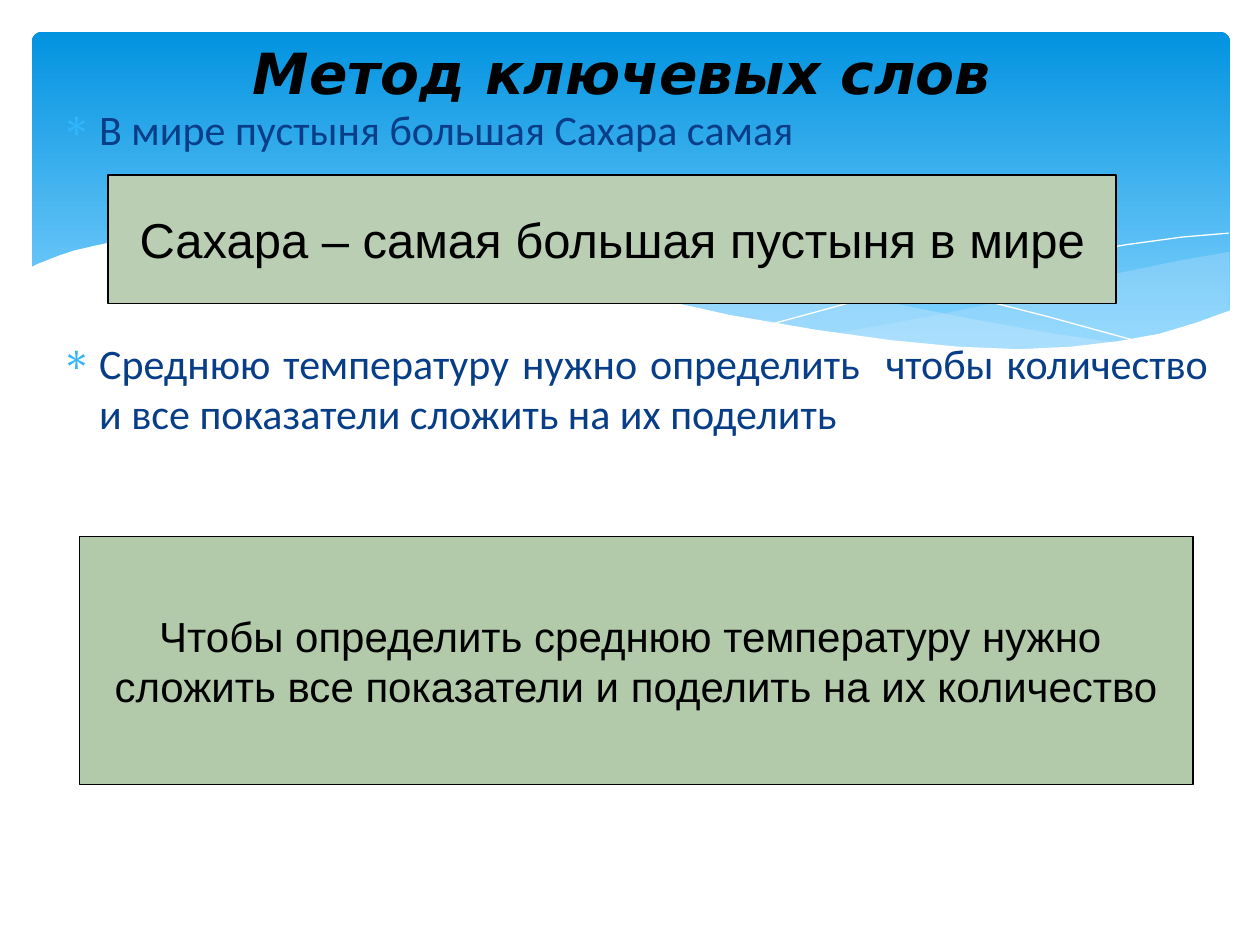
from typing import NamedTuple, Optional

from lxml import etree
from pptx import Presentation
from pptx.dml.color import RGBColor
from pptx.enum.shapes import MSO_SHAPE
from pptx.enum.text import MSO_ANCHOR, PP_ALIGN
from pptx.oxml.ns import qn
from pptx.util import Cm, Pt

ROUNDED, RECTANGLE = MSO_SHAPE.ROUNDED_RECTANGLE, MSO_SHAPE.RECTANGLE
LEFT, CENTER, JUSTIFY = PP_ALIGN.LEFT, PP_ALIGN.CENTER, PP_ALIGN.JUSTIFY
TOP, MIDDLE = MSO_ANCHOR.TOP, MSO_ANCHOR.MIDDLE

COLORS = {
    "sky_top": "0293E0", "sky_bottom": "83D3FE", "wave": "C6E7FC",
    "white": "FFFFFF", "black": "000000", "task": "073E87",
    "bullet": "31B6FD", "sahara": "B9CEB2", "temperature": "B2CAAA",
}


class Wave(NamedTuple):
    points: list[tuple[float, float]]  # cm
    fill: Optional[str] = None  # without a fill it is a thin white curve
    opacity: int = 100


class Answer(NamedTuple):
    left: float
    top: float
    width: float
    height: float
    fill: str
    size: int
    lines: list[str]


class Task(NamedTuple):
    text: str
    align: PP_ALIGN
    space_before: int


WAVES = [
    Wave([(24.77, 5.08), (23.74, 5.26), (22.63, 5.49), (21.87, 5.66), (20.45, 6.02),
          (19.13, 6.3), (17.93, 6.53), (16.79, 6.73), (17.55, 6.83), (18.59, 6.96),
          (19.53, 7.03), (20.4, 7.06), (21.21, 7.04), (21.92, 6.99), (22.58, 6.91),
          (23.19, 6.81), (23.75, 6.65), (24.46, 6.4), (24.79, 6.27), (24.79, 5.08)],
         "wave", 29),
    Wave([(22.68, 6.93), (21.26, 6.73), (19.69, 6.45), (17.93, 6.1), (15.98, 5.64),
          (14.83, 5.36), (13.74, 5.16), (12.75, 4.98), (11.81, 4.85), (10.67, 4.75),
          (9.65, 4.7), (8.74, 4.72), (7.95, 4.78), (7.26, 4.85), (8.2, 4.98),
          (9.19, 5.16), (10.26, 5.36), (11.4, 5.64), (13.46, 6.1), (15.27, 6.48),
          (16.51, 6.71), (17.65, 6.86), (18.69, 6.99), (19.63, 7.04), (20.5, 7.06),
          (21.29, 7.06), (22.02, 7.01)],
         "wave", 40),
    Wave([(7.85, 4.95), (8.74, 4.83), (9.5, 4.78), (10.57, 4.75), (11.91, 4.8),
          (13.54, 4.93), (14.78, 5.08), (16.15, 5.28), (17.65, 5.56), (19.3, 5.92),
          (21.11, 6.38), (23.04, 6.91)]),
    Wave([(15.57, 6.53), (17.07, 6.12), (18.29, 5.82), (19.71, 5.49), (21.23, 5.18),
          (22.73, 4.93), (23.83, 4.78), (24.77, 4.7)]),
    Wave([(24.82, 6.25), (24.13, 6.5), (23.37, 6.73), (22.53, 6.88), (21.59, 6.99),
          (20.55, 7.04), (19.33, 6.99), (17.98, 6.86), (16.46, 6.65), (14.71, 6.35),
          (12.78, 5.92), (11.35, 5.59), (9.93, 5.26), (8.64, 5), (7.42, 4.83),
          (6.35, 4.72), (5.36, 4.67), (4.5, 4.67), (3.71, 4.7), (3.02, 4.75),
          (2.41, 4.85), (1.93, 4.95), (1.5, 5.05), (1.17, 5.16), (0.74, 5.33),
          (0.58, 5.41), (0.58, 8.36), (24.82, 8.36)],
         "white"),
]

TASKS = [
    Task("В мире пустыня большая Сахара самая", LEFT, 0),
    Task("Среднюю температуру нужно определить  чтобы количество и все показатели "
         "сложить на их поделить", JUSTIFY, 105),
]

ANSWERS = [
    Answer(2.18, 3.53, 20.32, 2.59, "sahara", 28,
           ["Сахара – самая большая пустыня в мире"]),
    Answer(1.6, 10.82, 22.45, 5, "temperature", 24,
           ["Чтобы определить среднюю температуру нужно ",
            "сложить все показатели и поделить на их количество"]),
]


def rgb(name: str) -> RGBColor:
    return RGBColor.from_string(COLORS[name])


def style(font, name: str, size: float, color: str) -> None:
    font.name, font.size = name, Pt(size)
    font.color.rgb = rgb(color)


def draw_sky(shapes) -> None:
    sky = shapes.add_shape(ROUNDED, Cm(0.64), Cm(0.64), Cm(24.16), Cm(6.86))
    sky.adjustments[0] = 0.03
    sky.shadow.inherit = False
    sky.line.fill.background()
    sky.fill.gradient()
    sky.fill.gradient_angle = 270
    top, bottom = sky.fill.gradient_stops
    top.color.rgb, top.position = rgb("sky_top"), 0
    bottom.color.rgb, bottom.position = rgb("sky_bottom"), 0.9


def draw_wave(shapes, wave: Wave) -> None:
    start, *rest = [(Cm(x), Cm(y)) for x, y in wave.points]
    builder = shapes.build_freeform(*start)
    builder.add_line_segments(rest, close=wave.fill is not None)
    outline = builder.convert_to_shape()
    outline.shadow.inherit = False
    if wave.fill is None:
        outline.fill.background()
        outline.line.color.rgb = rgb("white")
        outline.line.width = Pt(0)
        return
    outline.line.fill.background()
    outline.fill.solid()
    outline.fill.fore_color.rgb = rgb(wave.fill)
    if wave.opacity < 100:
        color = outline.fill._xPr.find(qn("a:solidFill"))[0]
        etree.SubElement(color, qn("a:alpha"), val=str(wave.opacity * 1000))


def add_text_frame(shapes, left: float, top: float, width: float, height: float, anchor):
    frame = shapes.add_textbox(Cm(left), Cm(top), Cm(width), Cm(height)).text_frame
    frame.word_wrap = True
    frame.vertical_anchor = anchor
    return frame


def draw_title(shapes) -> None:
    frame = add_text_frame(shapes, 0.69, 0.64, 23.7, 1.6, MIDDLE)
    frame.text = "Метод ключевых слов"
    title = frame.paragraphs[0]
    title.alignment = CENTER
    style(title.runs[0].font, "DejaVu Sans", 32.4, "black")
    title.runs[0].font.bold = title.runs[0].font.italic = True


def draw_tasks(shapes, tasks: list[Task]) -> None:
    frame = add_text_frame(shapes, 0.99, 1.96, 23.62, 9, TOP)
    frame.text = "\n".join(task.text for task in tasks)
    for paragraph, task in zip(frame.paragraphs, tasks):
        paragraph.alignment = task.align
        paragraph.space_before = Pt(task.space_before)
        properties = paragraph._p.get_or_add_pPr()
        properties.set("marL", str(Cm(0.76)))
        properties.set("indent", str(Cm(-0.76)))
        bullet_color = etree.SubElement(properties, qn("a:buClr"))
        etree.SubElement(bullet_color, qn("a:srgbClr"), val=COLORS["bullet"])
        etree.SubElement(properties, qn("a:buChar"), char="∗")
        style(paragraph.runs[0].font, "Calibri", 24, "task")


def draw_answer(shapes, answer: Answer) -> None:
    card = shapes.add_shape(RECTANGLE, Cm(answer.left), Cm(answer.top),
                            Cm(answer.width), Cm(answer.height))
    card.shadow.inherit = False
    card.fill.solid()
    card.fill.fore_color.rgb = rgb(answer.fill)
    card.line.color.rgb = rgb("black")
    card.line.width = Pt(0.75)
    frame = card.text_frame
    frame.word_wrap = False
    frame.vertical_anchor = MIDDLE
    frame.text = "\n".join(answer.lines)
    for paragraph in frame.paragraphs:
        paragraph.alignment = CENTER
        style(paragraph.runs[0].font, "Arial", answer.size, "black")


def main() -> None:
    deck = Presentation()
    deck.slide_width, deck.slide_height = Cm(25.4), Cm(19.05)
    shapes = deck.slides.add_slide(deck.slide_layouts[6]).shapes

    # Background sky and waves
    draw_sky(shapes)
    for wave in WAVES:
        draw_wave(shapes, wave)

    # Heading, scrambled sentences and their answers
    draw_tasks(shapes, TASKS)
    draw_title(shapes)
    for answer in ANSWERS:
        draw_answer(shapes, answer)

    deck.save("out.pptx")


if __name__ == "__main__":
    main()
